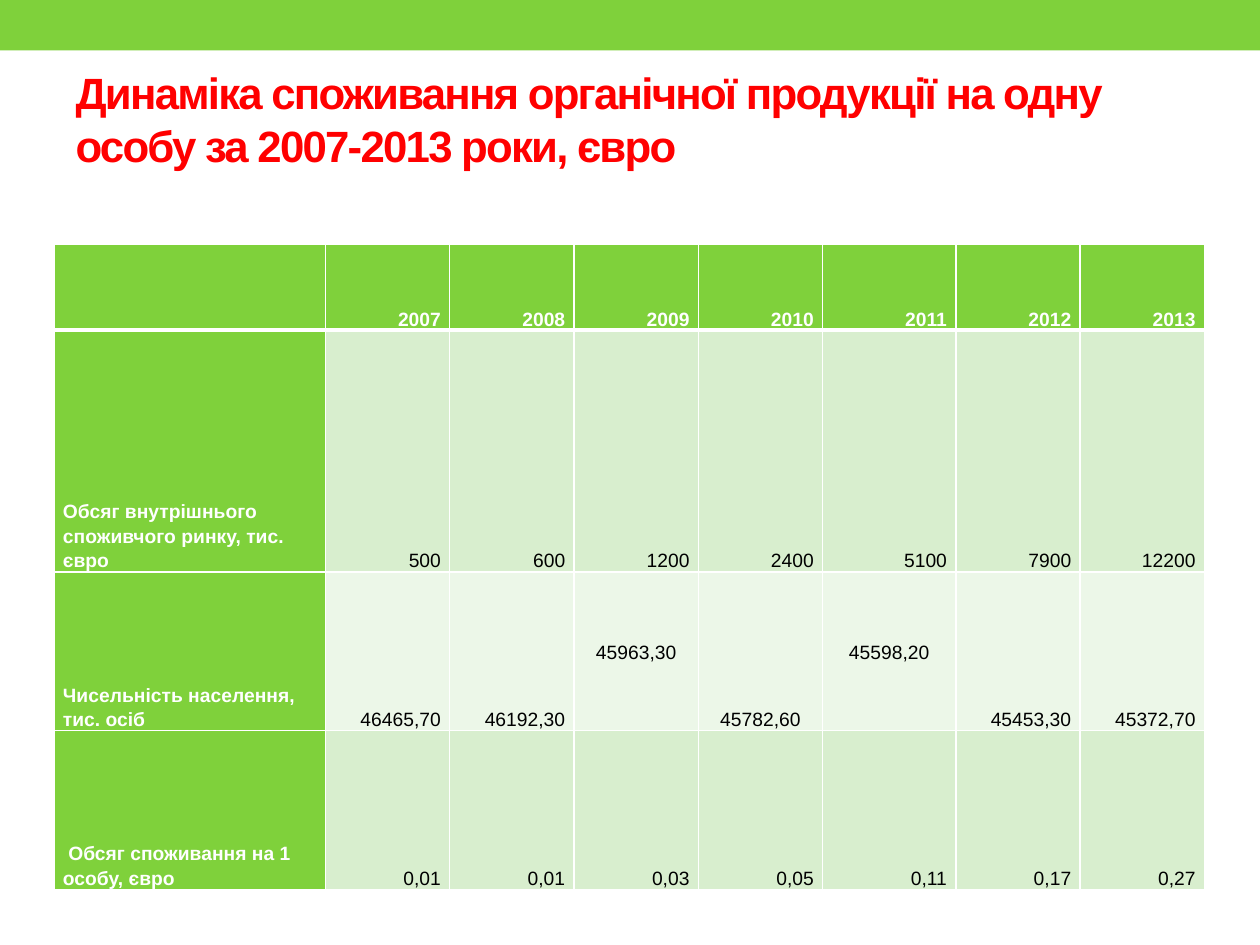
from pptx import Presentation
from pptx.dml.color import RGBColor
from pptx.enum.shapes import MSO_SHAPE
from pptx.enum.text import MSO_ANCHOR, PP_ALIGN
from pptx.oxml import parse_xml
from pptx.oxml.ns import nsdecls
from pptx.util import Inches, Pt

RECT = MSO_SHAPE.RECTANGLE
MIDDLE, BOTTOM = MSO_ANCHOR.MIDDLE, MSO_ANCHOR.BOTTOM
LEFT, CENTER, RIGHT = PP_ALIGN.LEFT, PP_ALIGN.CENTER, PP_ALIGN.RIGHT

GREEN, WHITE, BLACK, RED = "7FD13B", "FFFFFF", "000000", "FF0000"
BANDS = ["D8EECE", "ECF7E8"]

TITLE = "Динаміка споживання органічної продукції на одну особу за 2007-2013 роки, євро"
ROWS = [
    ["", "2007", "2008", "2009", "2010", "2011", "2012", "2013"],
    ["Обсяг внутрішнього споживчого ринку, тис. євро",
     "500", "600", "1200", "2400", "5100", "7900", "12200"],
    ["Чисельність населення, тис. осіб", "46465,70", "46192,30", "45963,30",
     "45782,60", "45598,20", "45453,30", "45372,70"],
    [" Обсяг споживання на 1 особу, євро",
     "0,01", "0,01", "0,03", "0,05", "0,11", "0,17", "0,27"],
]
COL_WIDTHS = [2.16, 0.99, 0.99, 0.99, 0.99, 1.06, 0.99, 0.99]
ROW_HEIGHTS = [0.68, 1.92, 1.26, 1.26]
# (row, column): (alignment, anchor) where a cell departs from the rule
PLACED = {(2, 3): (CENTER, MIDDLE), (2, 4): (CENTER, BOTTOM), (2, 5): (CENTER, MIDDLE)}


def rgb(value):
    return RGBColor.from_string(value)


def set_attrs(obj, **values):
    for name, value in values.items():
        setattr(obj, name, value)


def set_font(font, size, color, bold):
    set_attrs(font, name="Arial", size=Pt(size), bold=bold)
    font.color.rgb = rgb(color)


def add_band(slide, x, y, w, h):
    sp = slide.shapes.add_shape(RECT, Inches(x), Inches(y), Inches(w), Inches(h))
    sp.shadow.inherit = False
    sp.fill.solid()
    sp.fill.fore_color.rgb = rgb(GREEN)
    sp.line.fill.background()


def add_title(slide, x, y, w, h):
    sp = slide.shapes.title
    set_attrs(sp, left=Inches(x), top=Inches(y), width=Inches(w), height=Inches(h))
    tf = sp.text_frame
    set_attrs(tf, word_wrap=True, vertical_anchor=MIDDLE, margin_bottom=Inches(0.41))
    p = tf.paragraphs[0]
    p.alignment = LEFT
    r = p.add_run()
    r.text = TITLE
    set_font(r.font, 25, RED, True)
    r.font._element.set("spc", "-100")


def set_borders(cell, widths):
    """Draw white borders, widths in points by side: L, R, T, B."""
    tcPr = cell._tc.get_or_add_tcPr()
    for i, (side, width) in enumerate(widths.items()):
        tcPr.insert(i, parse_xml(
            f'<a:ln{side} {nsdecls("a")} w="{Pt(width)}"><a:solidFill>'
            f'<a:srgbClr val="{WHITE}"/></a:solidFill></a:ln{side}>'))


def format_cell(cell, row, col, text):
    is_head = row == 0 or col == 0
    align, anchor = PLACED.get((row, col), (RIGHT if col else LEFT, BOTTOM))
    set_attrs(cell, vertical_anchor=anchor, margin_left=Inches(0.07),
              margin_right=Inches(0.07), margin_top=0, margin_bottom=0)
    cell.fill.solid()
    cell.fill.fore_color.rgb = rgb(GREEN if is_head else BANDS[(row - 1) % 2])
    set_borders(cell, {"L": 1, "R": 1, "T": 3 if row == 1 else 1, "B": 1 if row else 3})
    if text:
        p = cell.text_frame.paragraphs[0]
        set_attrs(p, alignment=align, line_spacing=1.15)
        r = p.add_run()
        r.text = text
        set_font(r.font, 11, WHITE if is_head else BLACK, is_head)


def add_consumption_table(slide, x, y, w, h):
    table = slide.shapes.add_table(len(ROWS), len(COL_WIDTHS), Inches(x), Inches(y),
                                   Inches(w), Inches(h)).table
    for column, share in zip(table.columns, COL_WIDTHS):
        column.width = Inches(w * share / sum(COL_WIDTHS))
    for row, share in zip(table.rows, ROW_HEIGHTS):
        row.height = Inches(h * share / sum(ROW_HEIGHTS))
    for i, texts in enumerate(ROWS):
        for j, text in enumerate(texts):
            format_cell(table.cell(i, j), i, j, text)


def main():
    prs = Presentation()
    set_attrs(prs, slide_width=Inches(10), slide_height=Inches(7.5))
    s = prs.slides.add_slide(prs.slide_layouts[5])
    add_band(s, 0, 0, 10, 0.4)
    add_title(s, 0.5, 0.58, 9, 1.08)
    add_consumption_table(s, 0.43, 1.94, 9.13, 5.12)
    prs.save("out.pptx")


if __name__ == "__main__":
    main()
